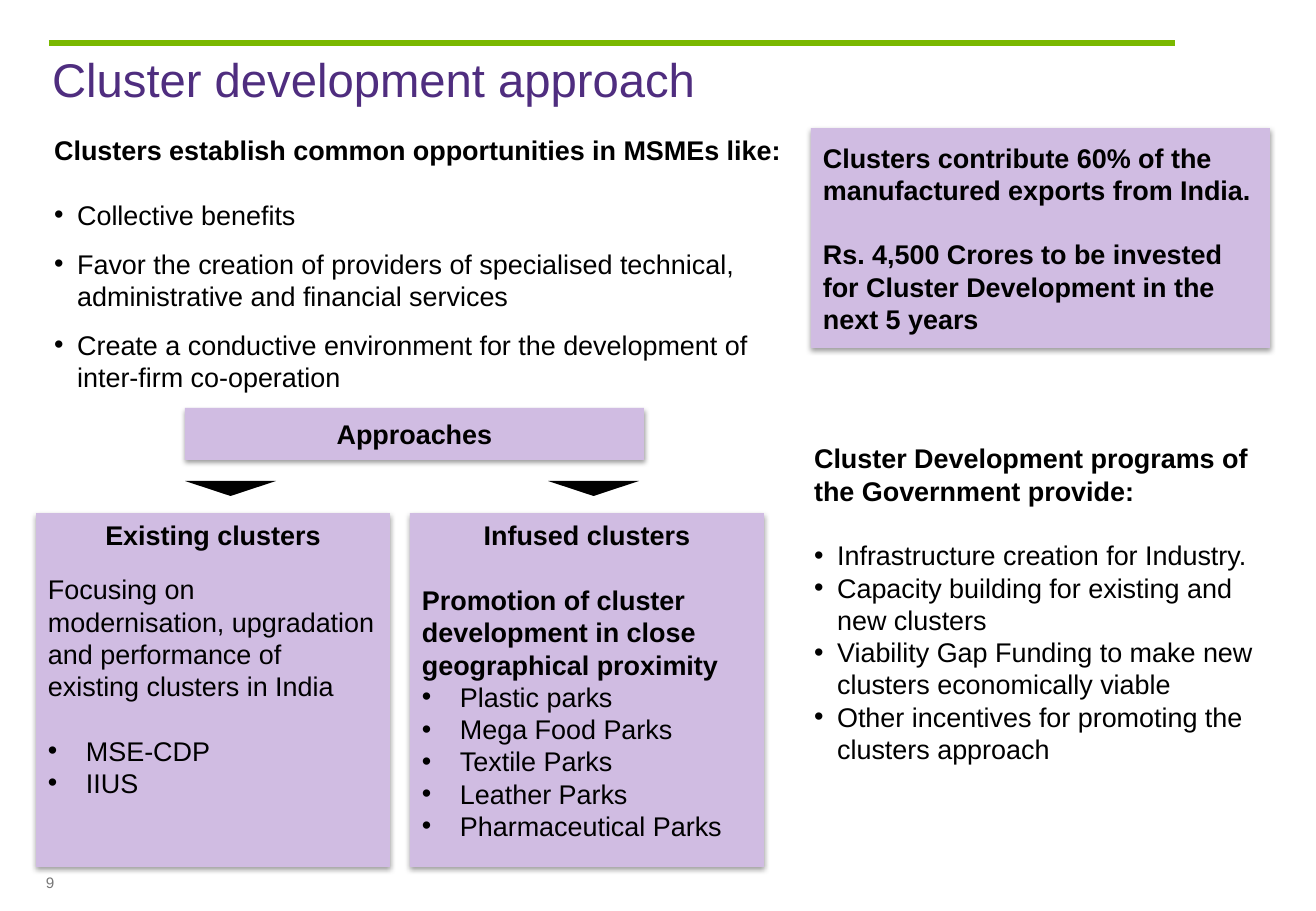
"""Build the slide on the cluster development approach."""
import pptx
import pptx.util
import pptx.dml.color
import pptx.enum.shapes
import pptx.enum.text
import pptx.oxml
from lxml import etree

PX = 7526
PURPLE = pptx.dml.color.RGBColor(0x4F, 0x2D, 0x7F)
LILAC = pptx.dml.color.RGBColor(0xD0, 0xBC, 0xE2)
GREEN = pptx.dml.color.RGBColor(0x7A, 0xB8, 0x00)
BLACK = pptx.dml.color.RGBColor(0, 0, 0)
GREY = pptx.dml.color.RGBColor(0x77, 0x77, 0x77)
LEFT, CENTER = pptx.enum.text.PP_ALIGN.LEFT, pptx.enum.text.PP_ALIGN.CENTER
TOP, MIDDLE = pptx.enum.text.MSO_ANCHOR.TOP, pptx.enum.text.MSO_ANCHOR.MIDDLE
SHAPES = pptx.enum.shapes.MSO_SHAPE
NS = "http://schemas.openxmlformats.org/drawingml/2006/main"
SHADOW = (f'<a:effectLst xmlns:a="{NS}"><a:outerShdw blurRad="40000" dist="20000" '
          'dir="5400000" rotWithShape="0"><a:srgbClr val="000000"><a:alpha val="38000"/>'
          '</a:srgbClr></a:outerShdw></a:effectLst>')
LINE_GAP, SMALL_GAP, HALF_GAP = 19.15, 12.8, 9.7


def write(holder, lines, anchor=TOP, size=16, color=BLACK, pitch=LINE_GAP):
    """Write lines of (words, bold, indent in px, gap above in points, alignment)."""
    frame = holder.text_frame
    frame.auto_size = pptx.enum.text.MSO_AUTO_SIZE.NONE
    frame.word_wrap = True
    frame.vertical_anchor = anchor
    for number, (words, bold, indent, gap, align) in enumerate(lines):
        paragraph = frame.add_paragraph() if number else frame.paragraphs[0]
        properties = paragraph._p.get_or_add_pPr()
        properties.set("marL", str(indent * PX))
        properties.set("indent", str(-indent * PX))
        if indent:
            etree.SubElement(properties, f"{{{NS}}}buFont", typeface="Arial")
            etree.SubElement(properties, f"{{{NS}}}buChar", char="•")
        else:
            etree.SubElement(properties, f"{{{NS}}}buNone")
        paragraph.alignment = align
        paragraph.space_before = pptx.util.Pt(gap)
        paragraph.space_after = pptx.util.Pt(0)
        paragraph.line_spacing = pptx.util.Pt(pitch)
        run = paragraph.add_run()
        run.text = words
        run.font.name = "Arial"
        run.font.size = pptx.util.Pt(size)
        run.font.bold = bold
        run.font.color.rgb = color


def place(shape, left, top, width, height):
    """Move and size a placeholder in px."""
    shape.left, shape.top = left * PX, top * PX
    shape.width, shape.height = width * PX, height * PX


deck = pptx.Presentation()
deck.slide_width, deck.slide_height = 1316 * PX, 911 * PX
slide = deck.slides.add_slide(deck.slide_layouts[3])
title, opportunities, programs = slide.placeholders

place(title, 40, 44, 1203, 69)
write(title, [("Cluster development approach", False, 0, 0, LEFT)],
      size=28, color=PURPLE, pitch=33.5)

place(opportunities, 42, 128, 769, 275)
write(opportunities, [
    ("Clusters establish common opportunities in MSMEs like:", True, 0, 0, LEFT),
    ("Collective benefits", False, 23, LINE_GAP, LEFT),
    ("Favor the creation of providers of specialised technical, administrative "
     "and financial services", False, 23, HALF_GAP, LEFT),
    ("Create a conductive environment for the development of inter-firm co-operation",
     False, 23, HALF_GAP, LEFT),
])

place(programs, 802, 436, 497, 339)
write(programs, [
    ("Cluster Development programs of the Government provide:", True, 0, 0, LEFT),
    ("Infrastructure creation for Industry.", False, 23, LINE_GAP, LEFT),
    ("Capacity building for existing and new clusters", False, 23, 0, LEFT),
    ("Viability Gap Funding to make new clusters economically viable", False, 23, 0, LEFT),
    ("Other incentives for promoting the clusters approach", False, 23, 0, LEFT),
])

rule = slide.shapes.add_connector(
    pptx.enum.shapes.MSO_CONNECTOR.STRAIGHT, 49 * PX, 43 * PX, 1175 * PX, 43 * PX)
rule.line.color.rgb = GREEN
rule.line.width = pptx.util.Pt(3.5)
etree.SubElement(rule._element.spPr, f"{{{NS}}}effectLst")

facts = [
    ("Clusters contribute 60% of the manufactured exports from India.", True, 0, 0, LEFT),
    ("Rs. 4,500 Crores to be invested for Cluster Development in the next 5 years",
     True, 0, LINE_GAP, LEFT),
]
approaches = [("Approaches", True, 0, 0, CENTER)]
existing = [
    ("Existing clusters", True, 0, 0, CENTER),
    ("Focusing on modernisation, upgradation and performance of existing clusters in India",
     False, 0, SMALL_GAP, LEFT),
    ("MSE-CDP", False, 38, LINE_GAP, LEFT),
    ("IIUS", False, 38, 0, LEFT),
]
parks = ["Plastic parks", "Mega Food Parks", "Textile Parks", "Leather Parks",
         "Pharmaceutical Parks"]
infused = [
    ("Infused clusters", True, 0, 0, CENTER),
    ("Promotion of cluster development in close geographical proximity",
     True, 0, LINE_GAP, LEFT),
] + [(park, False, 38, 0, LEFT) for park in parks]

for left, top, width, height, anchor, lines in [
    (811, 128, 459, 220, MIDDLE, facts),
    (185, 408, 459, 52, MIDDLE, approaches),
    (36, 513, 354, 354, TOP, existing),
    (410, 513, 354, 354, TOP, infused),
]:
    panel = slide.shapes.add_shape(
        SHAPES.RECTANGLE, left * PX, top * PX, width * PX, height * PX)
    panel.fill.solid()
    panel.fill.fore_color.rgb = LILAC
    panel.line.fill.background()
    panel._element.spPr.append(pptx.oxml.parse_xml(SHADOW))
    write(panel, lines, anchor)

for left in (185, 548):
    pointer = slide.shapes.add_shape(
        SHAPES.ISOSCELES_TRIANGLE, left * PX, 481 * PX, 91 * PX, 15 * PX)
    pointer.rotation = 180
    pointer.shadow.inherit = False
    pointer.fill.solid()
    pointer.fill.fore_color.rgb = BLACK
    pointer.line.fill.background()

page = slide.shapes.add_textbox(46 * PX, 874 * PX, 18 * PX, 18 * PX)
write(page, [("9", False, 0, 0, LEFT)], size=9, color=GREY, pitch=10.5)
page.text_frame.word_wrap = False
page.text_frame.margin_left = page.text_frame.margin_right = 0
page.text_frame.margin_top = page.text_frame.margin_bottom = 0

deck.save("out.pptx")
